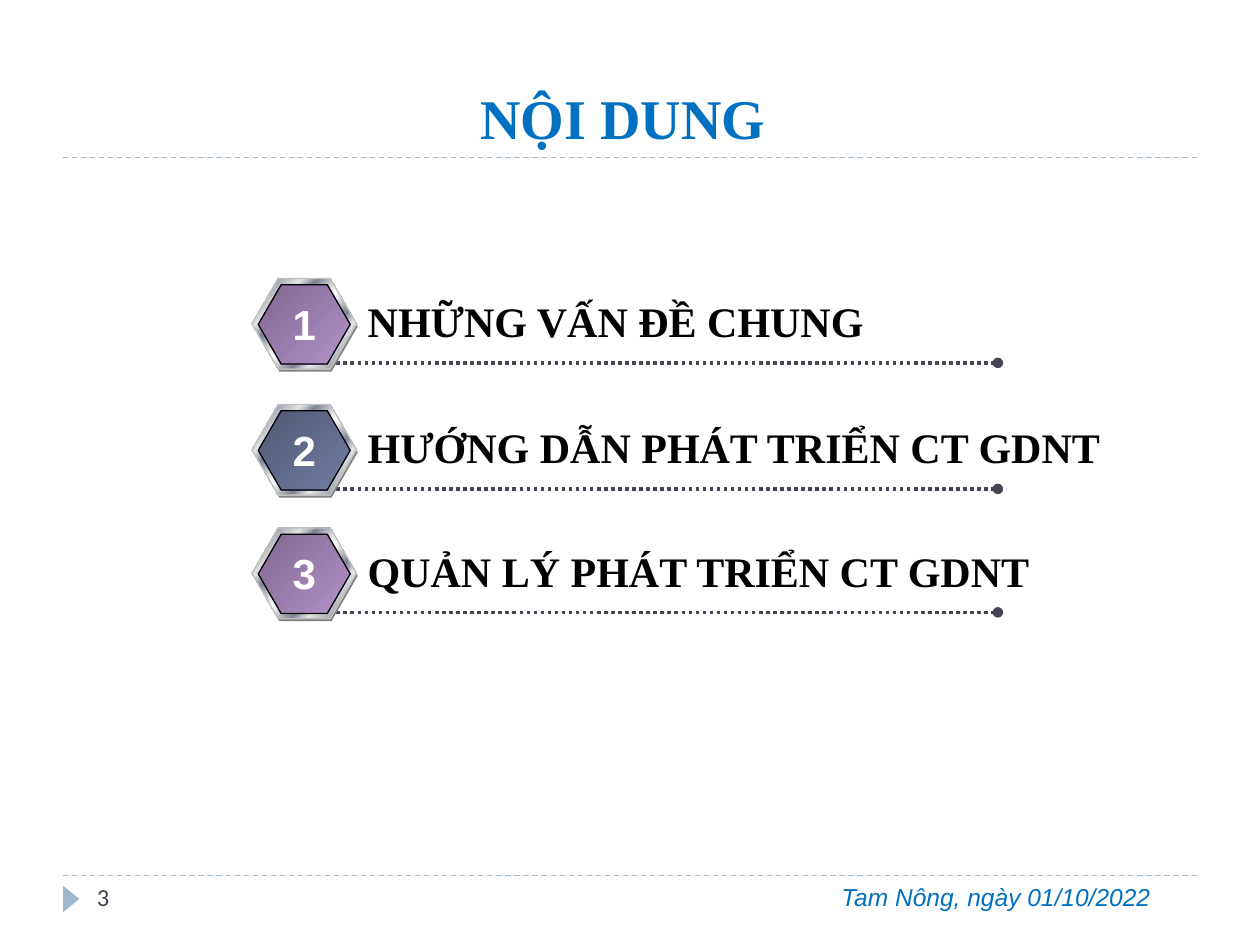
from pptx import Presentation
from pptx.dml.color import RGBColor
from pptx.enum.dml import MSO_LINE
from pptx.enum.shapes import MSO_CONNECTOR, MSO_SHAPE
from pptx.enum.text import MSO_ANCHOR, PP_ALIGN
from pptx.oxml.ns import qn
from pptx.util import Inches, Pt
from lxml import etree

BLUE = RGBColor(0x00, 0x70, 0xC0)
PALE_BLUE = RGBColor(0x9F, 0xB8, 0xCD)
SLATE = RGBColor(0x46, 0x46, 0x53)
BLACK = RGBColor(0x00, 0x00, 0x00)
WHITE = RGBColor(0xFF, 0xFF, 0xFF)
GREY = RGBColor(0x80, 0x80, 0x80)
SILVER = RGBColor(0xC0, 0xC0, 0xC0)
LIGHT = RGBColor(0xE6, 0xE6, 0xE6)
STEEL = RGBColor(0x7D, 0x84, 0x96)

METAL = [(0, LIGHT), (7, STEEL), (26, LIGHT), (34, STEEL), (46, LIGHT), (50, WHITE),
         (54, LIGHT), (66, STEEL), (74, LIGHT), (93, STEEL), (100, LIGHT)]
PURPLE = [(0, RGBColor(0x7F, 0x68, 0x90)), (100, RGBColor(0xB2, 0x92, 0xCA))]
INDIGO = [(0, RGBColor(0x52, 0x59, 0x75)), (100, RGBColor(0x72, 0x7C, 0xA3))]

SERIF = "Times New Roman"
TOPICS = [
    (2.21, "NHỮNG VẤN ĐỀ CHUNG", PURPLE),
    (3.21, "HƯỚNG DẪN PHÁT TRIỂN CT GDNT", INDIGO),
    (4.19, "QUẢN LÝ PHÁT TRIỂN CT GDNT", PURPLE),
]


def add_run(p, text, size, font, color, bold=False, italic=False):
    r = p.add_run()
    r.text = text
    r.font.size = Pt(size)
    r.font.name = font
    r.font.color.rgb = color
    r.font.bold = bold
    r.font.italic = italic


def add_text(s, box, text, size, font, color, align=PP_ALIGN.LEFT, wrap=True, **style):
    tf = s.shapes.add_textbox(*map(Inches, box)).text_frame
    tf.word_wrap = wrap
    p = tf.paragraphs[0]
    p.alignment = align
    add_run(p, text, size, font, color, **style)


def add_line(s, left, right, y, color, width, dash, dot_end=False):
    line = s.shapes.add_connector(MSO_CONNECTOR.STRAIGHT, Inches(left), Inches(y),
                                  Inches(right), Inches(y))
    line.line.color.rgb = color
    line.line.width = Pt(width)
    line.line.dash_style = dash
    if dot_end:
        etree.SubElement(line.line._get_or_add_ln(), qn("a:tailEnd"), type="oval")
    etree.SubElement(line._element.spPr, qn("a:effectLst"))


def fill_gradient(shape, stops):
    """Fill from top left to bottom right with (percent, colour) stops."""
    shape.fill.gradient()
    shape.fill.gradient_angle = 315
    stop_list = shape._element.spPr.find(qn("a:gradFill")).find(qn("a:gsLst"))
    for old in list(stop_list):
        stop_list.remove(old)
    for percent, color in stops:
        stop = etree.SubElement(stop_list, qn("a:gs"), pos=str(percent * 1000))
        etree.SubElement(stop, qn("a:srgbClr"), val=str(color))


def add_hexagon(group, box, fill, line=None):
    hexagon = group.shapes.add_shape(MSO_SHAPE.HEXAGON, *map(Inches, box))
    hexagon.shadow.inherit = False
    hexagon.adjustments[0] = 0.289
    if isinstance(fill, RGBColor):
        hexagon.fill.solid()
        hexagon.fill.fore_color.rgb = fill
    else:
        fill_gradient(hexagon, fill)
    if line is None:
        hexagon.line.fill.background()
    else:
        hexagon.line.color.rgb = line
        hexagon.line.width = Pt(0.75)


def add_badge(s, left, top, number, stops):
    group = s.shapes.add_group_shape()
    add_hexagon(group, (left + 0.01, top + 0.02, 0.83, 0.72), GREY)
    add_hexagon(group, (left, top, 0.83, 0.72), METAL, SILVER)
    add_hexagon(group, (left + 0.05, top + 0.05, 0.73, 0.63), stops, BLACK)
    add_text(s, (left + 0.22, top + 0.11, 0.39, 0.5), str(number), 24, "Arial", WHITE,
             align=PP_ALIGN.CENTER, wrap=False, bold=True)


def add_topic(s, left, top, number, label, stops):
    add_line(s, left + 0.67, left + 5.92, top + 0.67, SLATE, 2,
             MSO_LINE.ROUND_DOT, dot_end=True)
    add_badge(s, left, top, number, stops)
    add_text(s, (left + 0.82, top + 0.09, 7, 0.5), label, 24, SERIF, BLACK, bold=True)


def add_title(s, left, top, width, height):
    title = s.shapes.title
    title.left, title.top = Inches(left), Inches(top)
    title.width, title.height = Inches(width), Inches(height)
    tf = title.text_frame
    tf.vertical_anchor = MSO_ANCHOR.BOTTOM
    p = tf.paragraphs[0]
    p.alignment = PP_ALIGN.CENTER
    add_run(p, "NỘI DUNG ", 32, SERIF, BLUE, bold=True)
    add_line(s, left, left + width, top + height, PALE_BLUE, 0.75, MSO_LINE.DASH)


def add_footer(s, left, top, width):
    add_line(s, left, left + width, top, PALE_BLUE, 0.75, MSO_LINE.DASH)
    marker = s.shapes.add_shape(MSO_SHAPE.ISOSCELES_TRIANGLE, Inches(left - 0.04),
                                Inches(top + 0.12), Inches(0.21), Inches(0.13))
    marker.rotation = 90
    marker.shadow.inherit = False
    marker.fill.solid()
    marker.fill.fore_color.rgb = PALE_BLUE
    marker.line.fill.background()
    add_text(s, (left + 0.17, top, 2.17, 0.4), "3", 14, "Calibri", SLATE)
    add_text(s, (left + 6.08, top, 3, 0.4), "Tam Nông, ngày 01/10/2022", 14, "Arial",
             BLUE, italic=True)


def main():
    prs = Presentation()
    prs.slide_width, prs.slide_height = Inches(10), Inches(7.5)
    s = prs.slides.add_slide(prs.slide_layouts[5])
    add_title(s, 0.5, 0.17, 9, 1.08)
    for number, (top, label, stops) in enumerate(TOPICS, 1):
        add_topic(s, 2, top, number, label, stops)
    add_footer(s, 0.5, 6.95, 9)
    prs.save("out.pptx")


if __name__ == "__main__":
    main()
